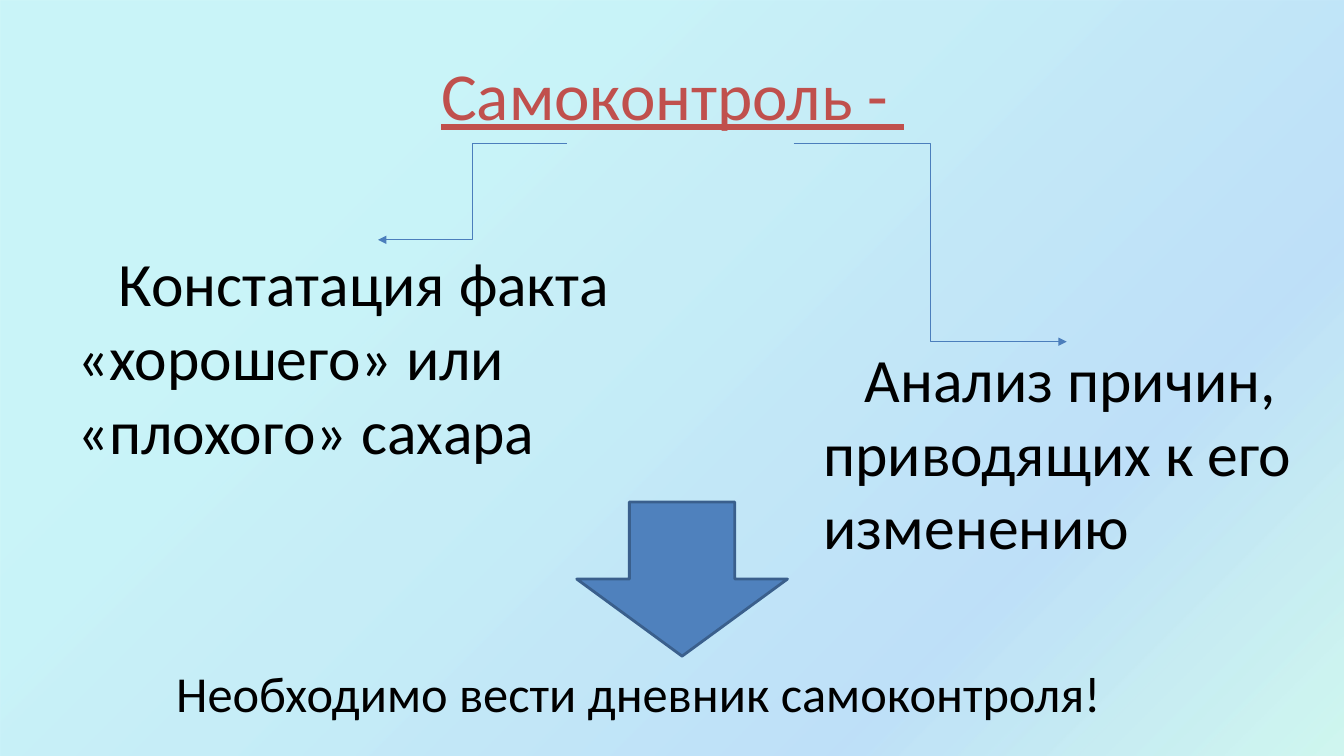
from dataclasses import dataclass

from lxml import etree
from pptx import Presentation
from pptx.dml.color import RGBColor
from pptx.enum.shapes import MSO_CONNECTOR, MSO_SHAPE
from pptx.enum.text import MSO_ANCHOR, PP_ALIGN
from pptx.oxml.ns import qn
from pptx.util import Inches, Pt

ELBOW = MSO_CONNECTOR.ELBOW
RECTANGLE = MSO_SHAPE.RECTANGLE
DOWN_ARROW = MSO_SHAPE.DOWN_ARROW
TOP, MIDDLE = MSO_ANCHOR.TOP, MSO_ANCHOR.MIDDLE
LEFT, CENTER = PP_ALIGN.LEFT, PP_ALIGN.CENTER
FONT = "Calibri"
BLACK = "000000"


@dataclass(frozen=True)
class Label:
    text: str
    left: float
    top: float
    width: float
    height: float
    size: int
    align: PP_ALIGN = LEFT
    anchor: MSO_ANCHOR = TOP
    color: str = BLACK
    underline: bool = False
    indent: float = 0


@dataclass(frozen=True)
class Branch:
    start: tuple[float, float]
    end: tuple[float, float]


@dataclass(frozen=True)
class GradientStop:
    position: int
    color: str
    opacity: int


LABELS = [
    Label("Самоконтроль - ", 0.67, 0.3, 12, 1.25, 48, CENTER, MIDDLE, "C0504D", True),
    Label("Констатация факта «хорошего» или «плохого» сахара",
          0.67, 2.38, 5.89, 4.32, 44, indent=0.41),
    Label("Анализ причин, приводящих к его изменению",
          8.07, 3.33, 5.89, 4.32, 44, indent=0.41),
    Label("Необходимо вести дневник самоконтроля!", 1.09, 6.52, 10.49, 0.71, 36, CENTER),
]
BRANCHES = [
    Branch((7.87, 1.42), (10.58, 3.39)),
    Branch((5.62, 1.42), (3.75, 2.38)),
]
BACKDROP_STOPS = [
    GradientStop(25, "21D6E0", 23),
    GradientStop(75, "0087E6", 25),
    GradientStop(100, "03D4A8", 18),
    GradientStop(100, "005CBF", 26),
]


def rgb(color: str) -> RGBColor:
    return RGBColor.from_string(color)


def add_backdrop(page) -> None:
    """Cover the page with a translucent diagonal gradient."""
    backdrop = page.shapes.add_shape(RECTANGLE, 0, 0, Inches(13.33), Inches(7.67))
    backdrop.shadow.inherit = False
    backdrop.line.fill.background()
    backdrop.fill.gradient()
    gradient = backdrop.element.spPr.find(qn("a:gradFill"))
    for child in list(gradient):
        gradient.remove(child)
    stops = etree.SubElement(gradient, qn("a:gsLst"))
    for stop in BACKDROP_STOPS:
        node = etree.SubElement(stops, qn("a:gs"), pos=str(stop.position * 1000))
        color = etree.SubElement(node, qn("a:srgbClr"), val=stop.color)
        etree.SubElement(color, qn("a:alpha"), val=str(stop.opacity * 1000))
    etree.SubElement(gradient, qn("a:lin"), ang=str(45 * 60000), scaled="0")


def add_label(page, label: Label) -> None:
    box = page.shapes.add_textbox(Inches(label.left), Inches(label.top),
                                  Inches(label.width), Inches(label.height))
    frame = box.text_frame
    frame.word_wrap = True
    frame.vertical_anchor = label.anchor
    para = frame.paragraphs[0]
    para.alignment = label.align
    if label.indent:
        para._p.get_or_add_pPr().set("indent", str(Inches(label.indent)))
    span = para.add_run()
    span.text = label.text
    span.font.name = FONT
    span.font.size = Pt(label.size)
    span.font.color.rgb = rgb(label.color)
    if label.underline:
        span.font.underline = True


def add_branch(page, branch: Branch) -> None:
    """Draw an elbow line with an arrowhead at its end."""
    points = [Inches(value) for value in branch.start + branch.end]
    connector = page.shapes.add_connector(ELBOW, *points)
    connector.line.color.rgb = rgb("4B7EBC")
    connector.line.width = Pt(0.75)
    properties = connector.element.spPr
    etree.SubElement(properties.find(qn("a:ln")), qn("a:tailEnd"), type="triangle")
    etree.SubElement(properties, qn("a:effectLst"))


def add_down_arrow(page) -> None:
    arrow = page.shapes.add_shape(DOWN_ARROW, Inches(5.72), Inches(4.98),
                                  Inches(2.09), Inches(1.53))
    arrow.shadow.inherit = False
    arrow.fill.solid()
    arrow.fill.fore_color.rgb = rgb("4F81BD")
    arrow.line.color.rgb = rgb("3A5F8C")
    arrow.line.width = Pt(2)


def main() -> None:
    deck = Presentation()
    deck.slide_width, deck.slide_height = Inches(13.33), Inches(7.5)
    page = deck.slides.add_slide(deck.slide_layouts[6])
    add_backdrop(page)
    *upper_labels, conclusion = LABELS
    for label in upper_labels:
        add_label(page, label)
    for branch in BRANCHES:
        add_branch(page, branch)
    add_down_arrow(page)
    add_label(page, conclusion)
    deck.save("out.pptx")


if __name__ == "__main__":
    main()
